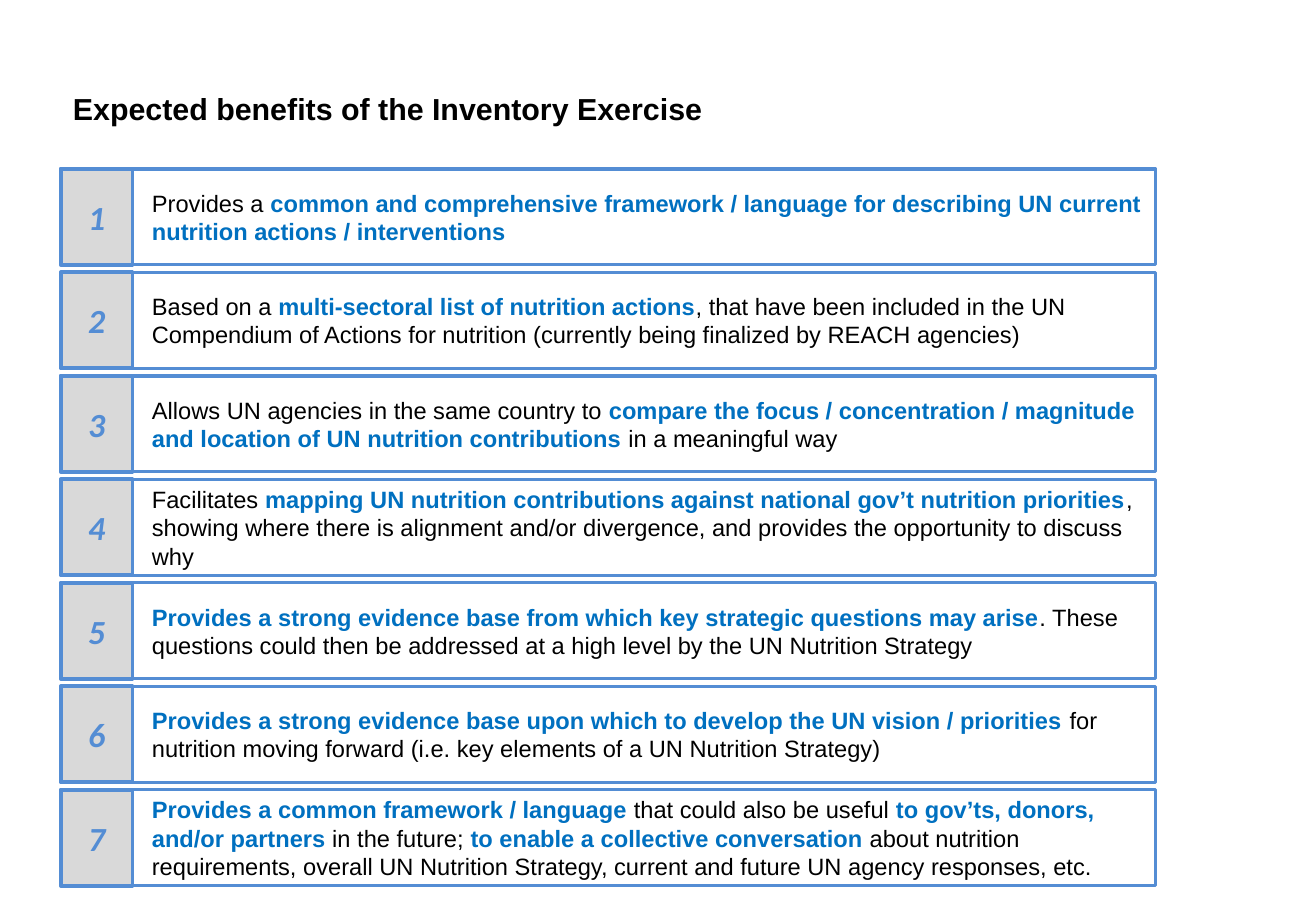
from pptx import Presentation
from pptx.dml.color import RGBColor
from pptx.enum.shapes import MSO_SHAPE
from pptx.enum.text import MSO_ANCHOR, PP_ALIGN
from pptx.util import Inches, Pt

BLACK, BLUE, BORDER, GREY, WHITE = "000000", "0070C0", "548DD4", "D9D9D9", "FFFFFF"
LEFT, TOP, PITCH, ROW_HEIGHT = 0.5, 1.39, 0.852, 0.79
BENEFIT_WIDTH, NUMBER_WIDTH = 9.01, 0.59

# Text between bars is emphasised.
BENEFITS = [
    "Provides a |common and comprehensive framework / language for describing "
    "UN current nutrition actions / interventions",
    "Based on a |multi-sectoral list of\u00a0nutrition actions|, that have been included "
    "in the UN Compendium of Actions for nutrition (currently being finalized by REACH agencies)",
    "Allows UN agencies in the same country to| compare the focus / concentration / magnitude "
    "and location of UN nutrition contributions |in a meaningful way",
    "Facilitates| mapping UN nutrition contributions against national gov’t nutrition priorities|"
    ", showing where there is alignment and/or divergence, and provides the opportunity "
    "to discuss why",
    "|Provides a strong evidence base from which key strategic questions may arise|. These "
    "questions could then be addressed at a high level by the UN Nutrition Strategy",
    "|Provides a strong evidence base upon which to develop the UN vision / priorities |for "
    "nutrition moving forward (i.e. key elements of a UN Nutrition Strategy)",
    "|Provides a common framework / language |that could also be useful |to gov’ts, donors, "
    "and/or partners| in the future; |to enable a collective conversation |about nutrition "
    "requirements,\u00a0overall UN Nutrition Strategy,\u00a0current and future UN agency "
    "responses, etc.",
]


def add_run(paragraph, text, color, **font_format):
    """Append a run with a hex colour and the given font attributes."""
    run = paragraph.add_run()
    run.text = text
    run.font.color.rgb = RGBColor.from_string(color)
    for attribute, value in font_format.items():
        setattr(run.font, attribute, value)


def add_cell(row, width, fill, line_width, margins):
    """Draw one bordered cell of a row and return its text frame."""
    cell = slide.shapes.add_shape(
        MSO_SHAPE.RECTANGLE, Inches(LEFT), Inches(TOP + row * PITCH),
        Inches(width), Inches(ROW_HEIGHT))
    cell.shadow.inherit = False
    cell.fill.solid()
    cell.fill.fore_color.rgb = RGBColor.from_string(fill)
    cell.line.color.rgb = RGBColor.from_string(BORDER)
    cell.line.width = Pt(line_width)
    frame = cell.text_frame
    frame.word_wrap = True
    frame.vertical_anchor = MSO_ANCHOR.MIDDLE
    for side, margin in margins.items():
        setattr(frame, f"margin_{side}", Inches(margin))
    return frame


deck = Presentation()
deck.slide_width, deck.slide_height = Inches(10.83), Inches(7.5)
slide = deck.slides.add_slide(deck.slide_layouts[5])

heading = slide.shapes.title
title_place = {"left": LEFT, "top": 0.18, "width": 9.83, "height": 0.91}
for attribute, length in title_place.items():
    setattr(heading, attribute, Inches(length))
heading.text_frame.vertical_anchor = MSO_ANCHOR.BOTTOM
heading_line = heading.text_frame.paragraphs[0]
heading_line.alignment = PP_ALIGN.LEFT
add_run(heading_line, "Expected benefits of the Inventory Exercise", BLACK,
        name="Arial", size=Pt(18), bold=True)

benefit_margins = {"left": 0.75, "top": 0.05, "right": 0.1, "bottom": 0.05}
number_margins = dict.fromkeys(benefit_margins, 0.1)

for row, benefit in enumerate(BENEFITS):
    statement = add_cell(row, BENEFIT_WIDTH, WHITE, 2, benefit_margins).paragraphs[0]
    statement.alignment = PP_ALIGN.LEFT
    if row >= 2:
        statement.space_before = statement.space_after = Pt(4)
    for index, phrase in enumerate(benefit.split("|")):
        emphasised = index % 2 == 1
        if phrase:
            add_run(statement, phrase, BLUE if emphasised else BLACK,
                    name="Arial", size=Pt(14), bold=emphasised)

    number = add_cell(row, NUMBER_WIDTH, GREY, 2.25, number_margins).paragraphs[0]
    number.alignment = PP_ALIGN.CENTER
    add_run(number, str(row + 1), BORDER,
            name="Calibri", size=Pt(20), bold=True, italic=True)

deck.save("out.pptx")
